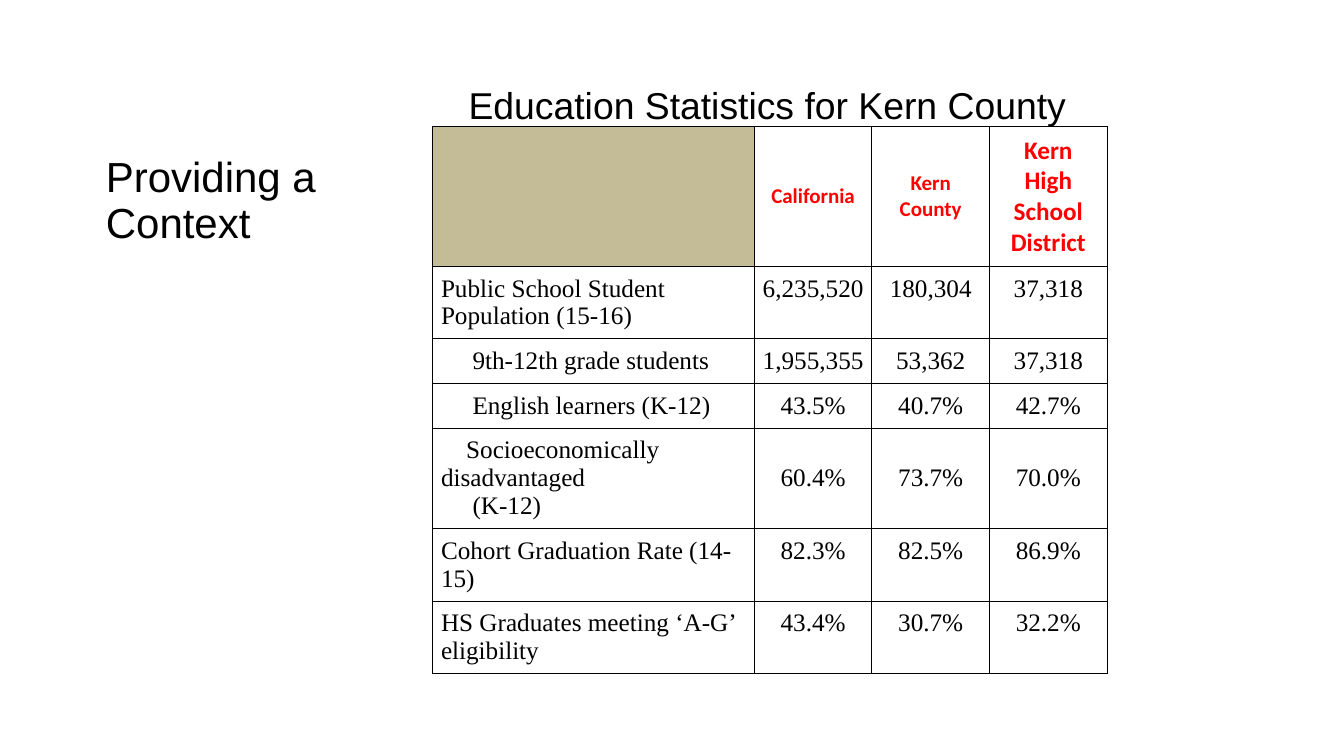
from lxml import etree
from pptx import Presentation
from pptx.dml.color import RGBColor
from pptx.enum.text import MSO_ANCHOR as ANCHOR, MSO_AUTO_SIZE as AUTOSIZE, PP_ALIGN as ALIGN
from pptx.oxml.ns import qn
from pptx.util import Inches, Pt

BLACK = RGBColor(0x00, 0x00, 0x00)
RED = RGBColor(0xFF, 0x00, 0x00)
TAN = RGBColor(0xC4, 0xBC, 0x96)

LABEL_W, VALUE_W = 3.83, 1.4
ROW_HEIGHTS = [0.97, 0.47, 0.47, 0.47, 0.72, 0.47, 0.47]
PAD = Inches(0.1)
INDENT = Pt(27)
TALL_ROW = 4

ROWS = [
    ["", "California", "Kern County", "Kern High School District"],
    ["Public School Student Population (15-16)", "6,235,520", "180,304", "37,318"],
    ["9th-12th grade students", "1,955,355", "53,362", "37,318"],
    ["English learners (K-12)", "43.5%", "40.7%", "42.7%"],
    ["Socioeconomically disadvantaged\n(K-12)", "60.4%", "73.7%", "70.0%"],
    ["Cohort Graduation Rate (14-15)", "82.3%", "82.5%", "86.9%"],
    ["HS Graduates meeting ‘A-G’ eligibility", "43.4%", "30.7%", "32.2%"],
]
# First-line indents of the sub-group labels, by row and paragraph
INDENTS = {2: [INDENT], 3: [INDENT], TALL_ROW: [Pt(21.6), INDENT]}


def set_font(p, name, size, color, bold=False):
    for r in p.runs:
        r.font.name, r.font.size, r.font.bold = name, Pt(size), bold
        r.font.color.rgb = color


def add_borders(cell):
    """Draw a thin black line on all four sides of a cell."""
    tcPr = cell._tc.get_or_add_tcPr()
    for i, side in enumerate(("a:lnL", "a:lnR", "a:lnT", "a:lnB")):
        ln = etree.Element(qn(side), w=str(Pt(1)))
        fill = etree.SubElement(ln, qn("a:solidFill"))
        etree.SubElement(fill, qn("a:srgbClr"), val=str(BLACK))
        tcPr.insert(i, ln)


prs = Presentation()
prs.slide_width, prs.slide_height = Inches(16), Inches(9)
s = prs.slides.add_slide(prs.slide_layouts[5])

# Title and table caption
title = s.shapes.title
title.left, title.top, title.width, title.height = map(Inches, (1.16, 1.97, 3.9, 0.87))
caption = s.shapes.add_textbox(*map(Inches, (5.48, 0.98, 8.31, 0.59)))

for sp, text, size in ((title, "Providing a Context", 36),
                       (caption, "Education Statistics for Kern County", 32)):
    tf = sp.text_frame
    tf.text = text
    tf.word_wrap = True
    tf.auto_size = AUTOSIZE.NONE
    tf.vertical_anchor = ANCHOR.MIDDLE
    tf.margin_left = tf.margin_right = PAD
    p = tf.paragraphs[0]
    p.alignment, p.line_spacing = ALIGN.LEFT, 0.9
    set_font(p, "Arial", size, BLACK)

# Statistics table
table = s.shapes.add_table(len(ROWS), len(ROWS[0]), Inches(5.15), Inches(1.51),
                           Inches(LABEL_W + 3 * VALUE_W), Inches(sum(ROW_HEIGHTS))).table
table.first_row = table.horz_banding = False
for c, column in enumerate(table.columns):
    column.width = Inches(VALUE_W if c else LABEL_W)

for r, (values, height) in enumerate(zip(ROWS, ROW_HEIGHTS)):
    table.rows[r].height = Inches(height)
    for c, value in enumerate(values):
        cell = table.cell(r, c)
        cell.margin_left = cell.margin_right = cell.margin_top = cell.margin_bottom = PAD
        centred = r == 0 or (r == TALL_ROW and c > 0)
        cell.vertical_anchor = ANCHOR.MIDDLE if centred else ANCHOR.TOP
        if r == c == 0:
            cell.fill.solid()
            cell.fill.fore_color.rgb = TAN
        else:
            cell.fill.background()
        add_borders(cell)

        cell.text_frame.text = value
        for i, p in enumerate(cell.text_frame.paragraphs):
            p.alignment = ALIGN.CENTER if c else ALIGN.LEFT
            if c == 0 and r in INDENTS:
                pPr = p._p.get_or_add_pPr()
                pPr.set("marL", "0")
                pPr.set("indent", str(INDENTS[r][i]))
            if r == 0:
                set_font(p, "Calibri", 21.6 if c == 3 else 18, RED, bold=True)
            else:
                set_font(p, "Times New Roman", 21.6, BLACK)

prs.save("out.pptx")
